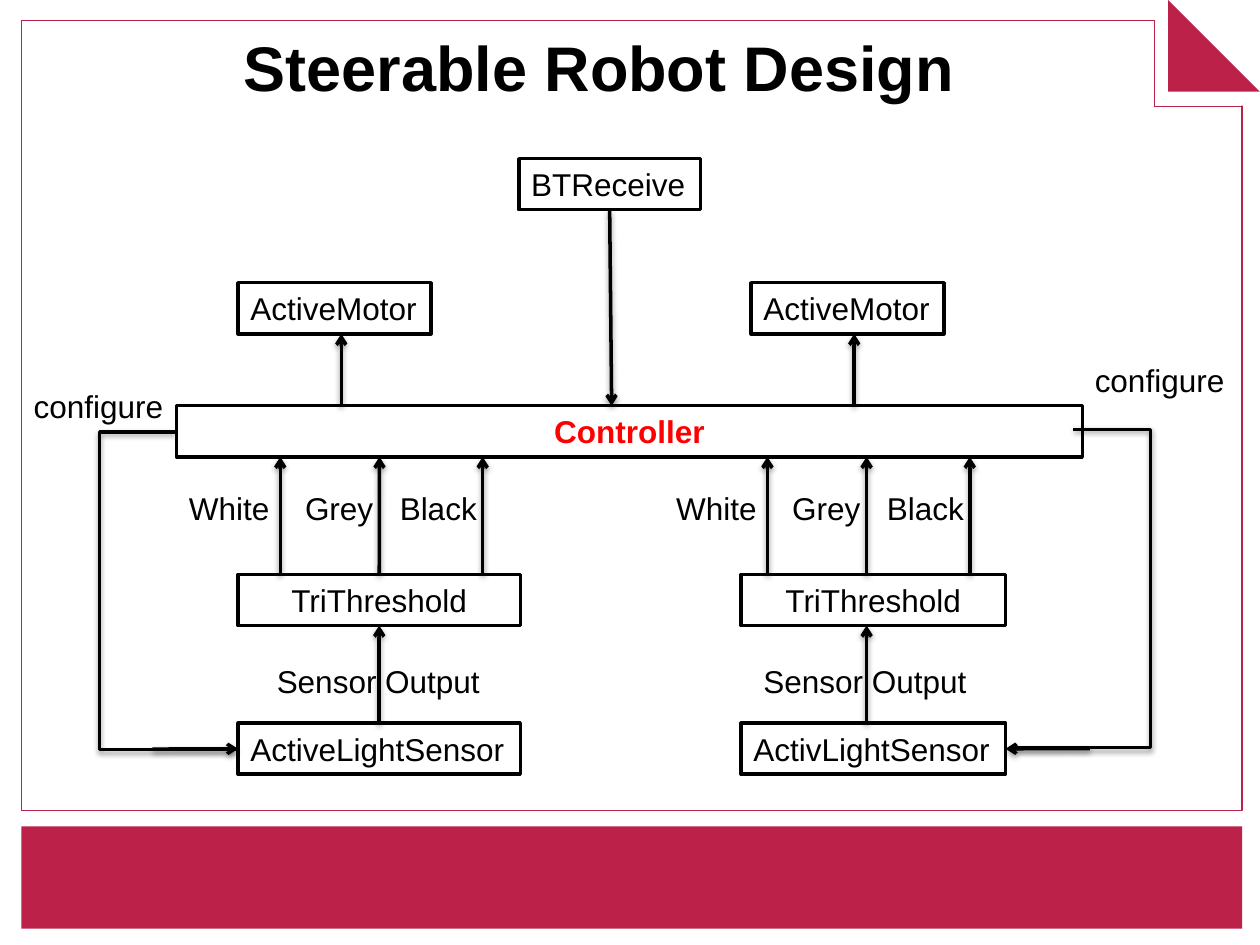
from dataclasses import dataclass
from lxml.etree import SubElement
from pptx import Presentation
from pptx.dml.color import RGBColor
from pptx.enum.shapes import MSO_CONNECTOR, MSO_SHAPE
from pptx.enum.text import MSO_ANCHOR, PP_ALIGN
from pptx.oxml import parse_xml
from pptx.oxml.ns import nsdecls, qn
from pptx.util import Cm, Pt


@dataclass
class Theme:
    font = "Arial"
    crimson = RGBColor(0xBC, 0x21, 0x49)
    white = RGBColor(0xFF, 0xFF, 0xFF)
    black = RGBColor(0x00, 0x00, 0x00)
    red = RGBColor(0xFF, 0x00, 0x00)
    title_size = Pt(36)
    body_size = Pt(18)
    frame_width = Pt(0.75)
    flow_width = Pt(2)


theme = Theme()
SHADOW = (
    f'<a:effectLst {nsdecls("a")}>'
    '<a:outerShdw blurRad="40000" dist="20000" dir="5400000" rotWithShape="0">'
    '<a:srgbClr val="000000"><a:alpha val="38000"/></a:srgbClr>'
    '</a:outerShdw></a:effectLst>'
)


def write(box, text, align=PP_ALIGN.LEFT, size=theme.body_size, color=theme.black, bold=False, wrap=False):
    box.text_frame.word_wrap = wrap
    box.text_frame.vertical_anchor = MSO_ANCHOR.MIDDLE
    para = box.text_frame.paragraphs[0]
    para.alignment = align
    span = para.add_run()
    span.text = text
    span.font.name = theme.font
    span.font.size = size
    span.font.bold = bold
    span.font.color.rgb = color
    return para


def style_flow(line_shape, arrow=True):
    line_shape.line.color.rgb = theme.black
    line_shape.line.width = theme.flow_width
    properties = line_shape._element.spPr
    if arrow:
        SubElement(properties.get_or_add_ln(), qn("a:tailEnd"), type="arrow")
    properties.append(parse_xml(SHADOW))


deck = Presentation()
deck.slide_width = Cm(25.4)
deck.slide_height = Cm(19.05)
page = deck.slides.add_slide(deck.slide_layouts[6])
shapes = page.shapes

for kind, left, top, width, height, fill, outlined in [
    (MSO_SHAPE.RECTANGLE, 0.43, 0.41, 24.61, 15.93, theme.white, True),
    (MSO_SHAPE.RECTANGLE, 23.27, 0, 2.13, 2.13, theme.white, False),
    (MSO_SHAPE.RIGHT_TRIANGLE, 23.55, 0, 1.85, 1.85, theme.crimson, False),
    (MSO_SHAPE.RECTANGLE, 0.43, 16.66, 24.61, 2.06, theme.crimson, False),
]:
    panel = shapes.add_shape(kind, Cm(left), Cm(top), Cm(width), Cm(height))
    panel.shadow.inherit = False
    panel.fill.solid()
    panel.fill.fore_color.rgb = fill
    if outlined:
        panel.line.color.rgb = theme.crimson
        panel.line.width = theme.frame_width
    else:
        panel.line.fill.background()

for x1, y1, x2, y2 in [(23.27, 0.41, 23.27, 2.15), (23.27, 2.15, 25.02, 2.15)]:
    notch = shapes.add_connector(MSO_CONNECTOR.STRAIGHT, Cm(x1), Cm(y1), Cm(x2), Cm(y2))
    notch.line.color.rgb = theme.crimson
    notch.line.width = theme.frame_width
    SubElement(notch._element.spPr, qn("a:effectLst"))

title = shapes.add_textbox(Cm(1.09), Cm(0.53), Cm(21.97), Cm(1.6))
write(title, "Steerable Robot Design", PP_ALIGN.CENTER, theme.title_size, bold=True, wrap=True)

blocks = {}
for key, text, left, top, width in [
    ("receiver", "BTReceive", 10.46, 3.2, 3.66),
    ("controller", "Controller", 3.56, 8.18, 18.26),
    ("left sensor", "ActiveLightSensor", 4.8, 14.58, 5.69),
    ("right sensor", "ActivLightSensor", 14.94, 14.58, 5.33),
    ("left threshold", "TriThreshold", 4.8, 11.58, 5.69),
    ("right threshold", "TriThreshold", 14.94, 11.58, 5.33),
    ("left motor", "ActiveMotor", 4.8, 5.7, 3.89),
    ("right motor", "ActiveMotor", 15.14, 5.7, 3.89),
]:
    block = shapes.add_shape(MSO_SHAPE.RECTANGLE, Cm(left), Cm(top), Cm(width), Cm(1.03))
    block.shadow.inherit = False
    block.fill.solid()
    block.fill.fore_color.rgb = theme.white
    block.line.color.rgb = theme.black
    block.line.width = theme.flow_width
    if key == "controller":
        write(block, text, PP_ALIGN.CENTER, color=theme.red, bold=True, wrap=True)
    elif "threshold" in key:
        write(block, text, PP_ALIGN.CENTER, wrap=True)
    else:
        write(block, text)
    blocks[key] = block

flows = [(12.29, 4.23, 12.33, 8.18, ("receiver", 2), None)]
for side, shift, motor_x in [("left", 0, 6.88), ("right", 9.82, 17.22)]:
    centred = side == "left"
    threshold_top = (f"{side} threshold", 0) if centred else None
    threshold_bottom = (f"{side} threshold", 2) if centred else None
    sensor_top = (f"{side} sensor", 0) if centred else None
    flows += [
        (5.65 + shift, 11.58, 5.65 + shift, 9.21, None, None),
        (7.65 + shift, 11.58, 7.65 + shift, 9.21, threshold_top, None),
        (9.73 + shift, 11.58, 9.73 + shift, 9.21, None, None),
        (7.65 + shift, 14.58, 7.65 + shift, 12.61, sensor_top, threshold_bottom),
        (motor_x, 8.18, motor_x, 6.73, None, None),
    ]
flows += [
    (3.07, 15.1, 4.8, 15.1, None, ("left sensor", 1)),
    (21.97, 15.09, 20.27, 15.09, None, ("right sensor", 3)),
]
for x1, y1, x2, y2, start, finish in flows:
    flow = shapes.add_connector(MSO_CONNECTOR.STRAIGHT, Cm(x1), Cm(y1), Cm(x2), Cm(y2))
    if start:
        flow.begin_connect(blocks[start[0]], start[1])
    if finish:
        flow.end_connect(blocks[finish[0]], finish[1])
    style_flow(flow)

for start_x, outer_x, end_x, top, bottom in [
    (3.53, 2.01, 4.75, 8.71, 15.11),
    (21.64, 23.19, 20.45, 8.66, 15.07),
]:
    builder = shapes.build_freeform(Cm(start_x), Cm(top))
    corners = [(outer_x, top), (outer_x, bottom), (end_x, bottom)]
    builder.add_line_segments([(Cm(x), Cm(y)) for x, y in corners], close=False)
    loop = builder.convert_to_shape()
    loop.fill.background()
    style_flow(loop, arrow=False)

for text, left, top, width in [
    ("White\tGrey\tBlack", 3.56, 9.73, 6.6),
    ("White\tGrey\tBlack", 13.38, 9.73, 6.6),
    ("Sensor Output", 5.33, 13.21, 4.65),
    ("Sensor Output", 15.14, 13.21, 4.65),
    ("configure", 0.43, 7.66, 3.15),
    ("configure", 21.82, 7.15, 3.15),
]:
    label = shapes.add_textbox(Cm(left), Cm(top), Cm(width), Cm(1.03))
    para = write(label, text, wrap="\t" in text)
    if "\t" in text:
        stops = SubElement(para._p.get_or_add_pPr(), qn("a:tabLst"))
        for position in (2.34, 4.25):
            SubElement(stops, qn("a:tab"), pos=str(Cm(position)), algn="l")

deck.save("out.pptx")
